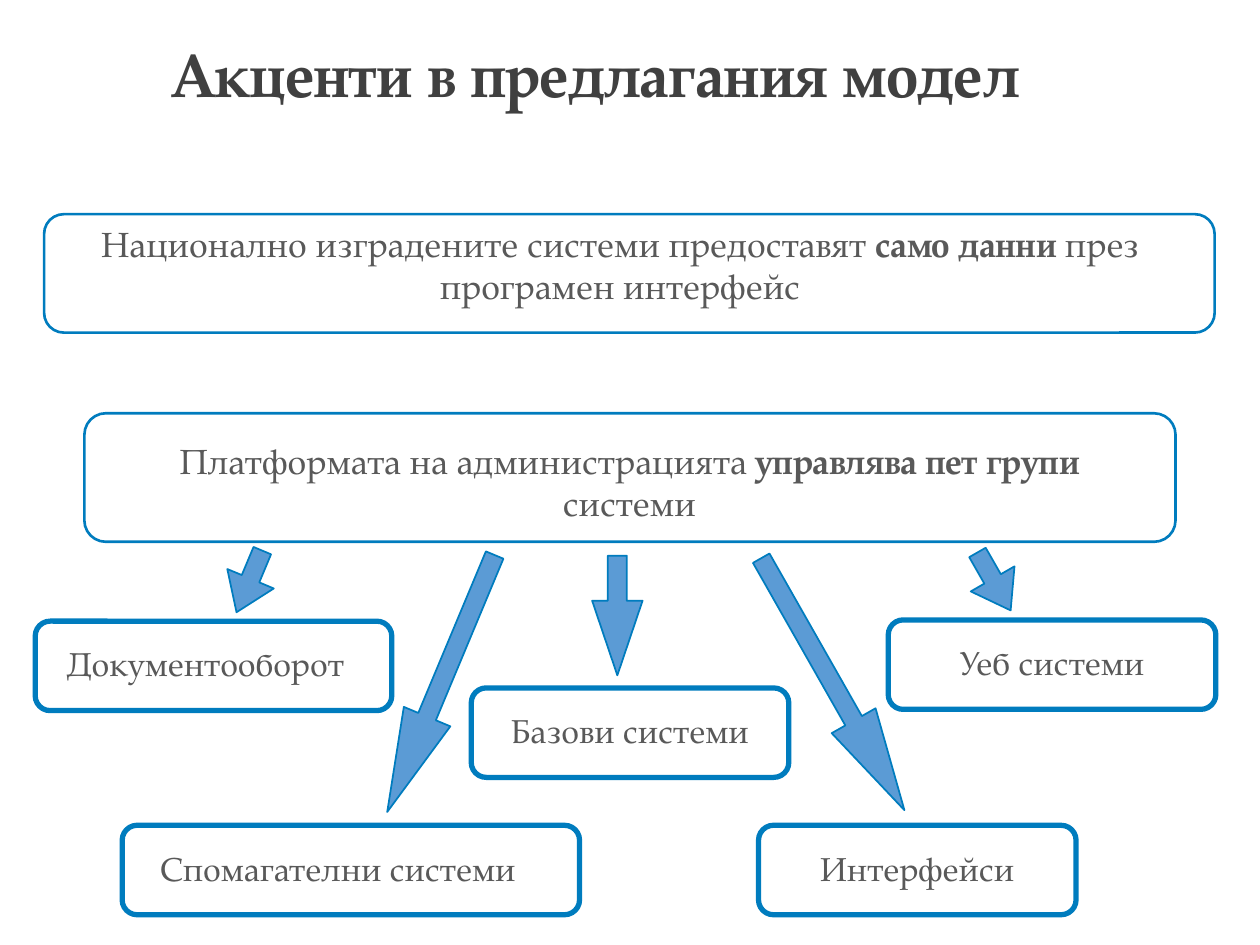
import pptx
import pptx.util
import pptx.dml.color
import pptx.enum.shapes
import pptx.enum.text

KIND = pptx.enum.shapes.MSO_SHAPE
ALIGN = pptx.enum.text.PP_ALIGN
FIT = pptx.enum.text.MSO_AUTO_SIZE
ANCHOR = pptx.enum.text.MSO_ANCHOR


def tint(code):
    return pptx.dml.color.RGBColor.from_string(code)


class Page:
    face = "TeX Gyre Pagella"
    dark, gray = "404040", "595959"
    edge, blue, white = "007CBE", "5B9BD5", "FFFFFF"
    cols, rows = 100, 75

    def __init__(self, deck):
        self.deck = deck
        self.slide = deck.slides.add_slide(deck.slide_layouts[5])

    def place(self, area):
        x, y, w, h = area
        col = self.deck.slide_width / self.cols
        row = self.deck.slide_height / self.rows
        return [round(v) for v in (x * col, y * row, w * col, h * row)]

    def style(self, run, size, color, bold=False):
        font = run.font
        font.name, font.size, font.bold = self.face, pptx.util.Pt(size), bold
        font.color.rgb = tint(color)

    def title(self, text, area):
        shape = self.slide.shapes.title
        shape.left, shape.top, shape.width, shape.height = self.place(area)
        frame = shape.text_frame
        frame.text = text
        frame.vertical_anchor = ANCHOR.MIDDLE
        para = frame.paragraphs[0]
        para.alignment, para.line_spacing = ALIGN.LEFT, 0.9
        self.style(para.runs[0], 35, self.dark, True)

    def shape(self, kind, area, fill, line):
        shape = self.slide.shapes.add_shape(kind, *self.place(area))
        shape.shadow.inherit = False
        shape.fill.solid()
        shape.fill.fore_color.rgb = tint(fill)
        shape.line.color.rgb = tint(self.edge)
        shape.line.width = pptx.util.Pt(line)
        return shape

    def box(self, area, line):
        self.shape(KIND.ROUNDED_RECTANGLE, area, self.white, line)

    def label(self, parts, area, size, align=ALIGN.CENTER):
        frame = self.slide.shapes.add_textbox(*self.place(area)).text_frame
        frame.word_wrap = True
        frame.auto_size = FIT.SHAPE_TO_FIT_TEXT
        para = frame.paragraphs[0]
        para.alignment = align
        for text, bold in parts:
            run = para.add_run()
            run.text = text
            self.style(run, size, self.gray, bold)

    def group(self, text, area, inset, align=ALIGN.CENTER):
        x, y, w, h = area
        self.box(area, 3)
        self.label([(text, False)], (x + inset, y + 1.3, w - 2 * inset, 4.2),
                   19, align)

    def arrow(self, area, turn, head):
        shape = self.shape(KIND.DOWN_ARROW, area, self.blue, 1)
        shape.rotation = turn
        shape.adjustments[0], shape.adjustments[1] = 0.377, head


def main():
    deck = pptx.Presentation()
    deck.slide_width = pptx.util.Inches(10)
    deck.slide_height = pptx.util.Inches(7.5)
    page = Page(deck)
    page.title("Акценти в предлагания модел", (12.6, 0.4, 86.2, 11.5))

    page.box((3.5, 17, 92.9, 9.4), 1.5)
    page.label([("Национално изградените системи предоставят ", False),
                ("само данни ", True), ("през програмен интерфейс", False)],
               (5.1, 17.2, 88.2, 7.7), 20)
    page.box((6.7, 32.8, 86.6, 10.2), 1.5)
    page.label([("Платформата на администрацията ", False),
                ("управлява пет групи ", True), ("системи", False)],
               (9.7, 34.4, 80.5, 7.7), 20)

    high = 7.1
    for text, x, y, wide, inset, align in (
            ("Документооборот", 2.8, 49.3, 28.3, 1.5, ALIGN.LEFT),
            ("Базови системи", 37.4, 54.6, 25.2, 1.4, ALIGN.CENTER),
            ("Уеб системи", 70.5, 49.2, 26, 1.4, ALIGN.CENTER),
            ("Спомагателни системи", 9.7, 65.5, 36.3, 2, ALIGN.LEFT),
            ("Интерфейси", 60.2, 65.5, 25.2, 1.4, ALIGN.CENTER)):
        page.group(text, (x, y, wide, high), inset, align)

    for x, y, tall, turn, head in (
            (17.8, 43.5, 5.3, 22.7, 0.72),
            (76.9, 43.5, 5.3, 330.2, 0.72),
            (33, 43.2, 22.1, 22.7, 2.05),
            (64.1, 42.8, 23, 330.4, 2.04),
            (47, 44.1, 9.5, 0, 1.48)):
        page.arrow((x, y, 4, tall), turn, head)

    deck.save("out.pptx")


if __name__ == "__main__":
    main()
